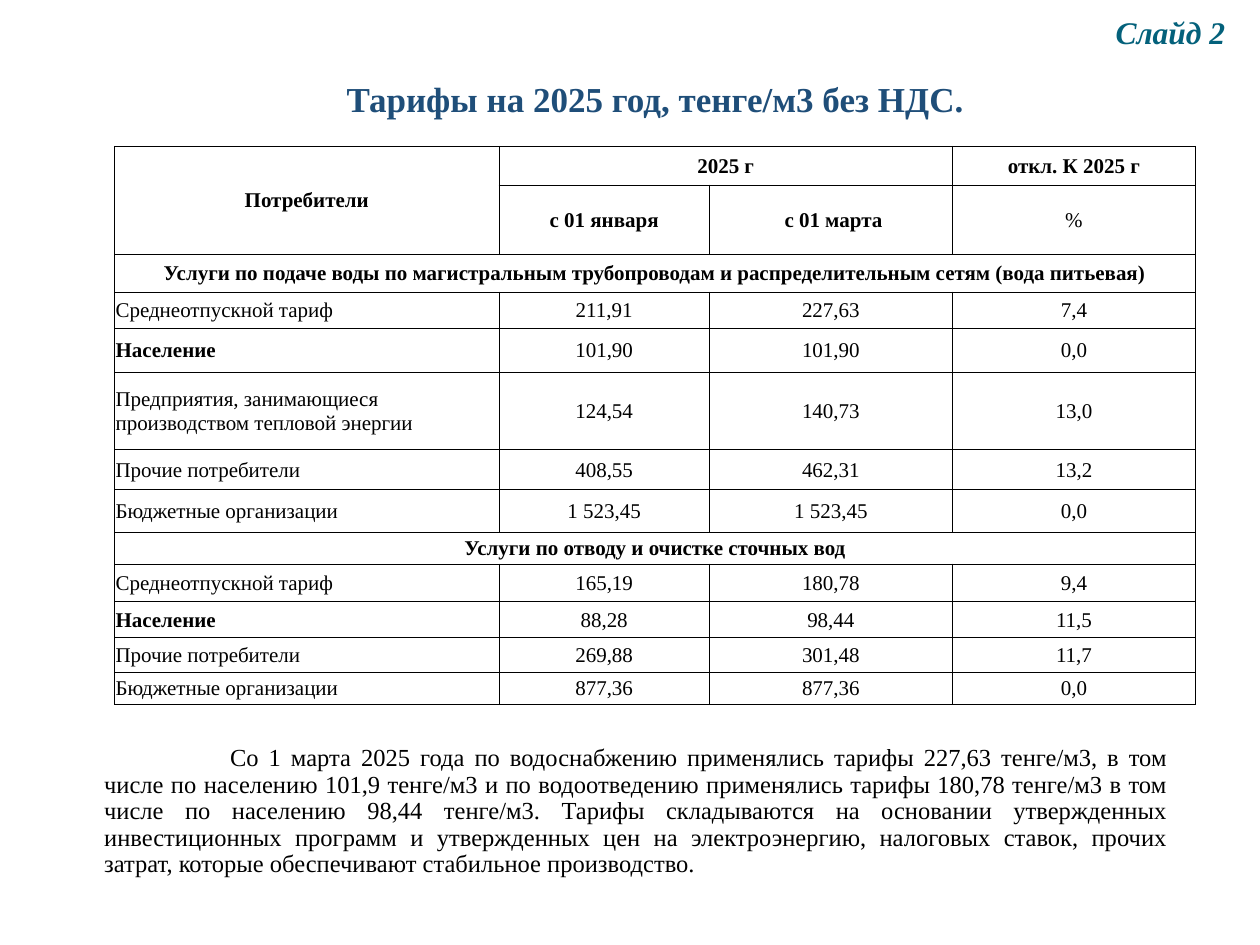
from dataclasses import dataclass

from lxml import etree
from pptx import Presentation
from pptx import util as u
from pptx.dml.color import RGBColor
from pptx.enum import text
from pptx.oxml.ns import qn


@dataclass(frozen=True)
class Theme:
    font: str = "Times New Roman"
    title: str = "1F4E79"
    label: str = "04617B"
    ink: str = "000000"
    paper: str = "FFFFFF"
    title_size: int = 20
    label_size: int = 18
    note_size: int = 14
    table_size: int = 12
    border: float = 0.5


THEME = Theme()
ALIGN = text.PP_ALIGN
COLUMNS = [7.75, 4.24, 4.9, 4.9]
ROW_HEIGHTS = [0.78, 1.4, 0.76, 0.73, 0.89, 1.55, 0.81, 0.86, 0.64, 0.76, 0.73, 0.69, 0.66]
HEADER = [
    ["Потребители", "2025 г", "", "откл. К 2025 г"],
    ["", "с 01 января", " с 01 марта", "%"],
]
SECTIONS = {
    "Услуги по подаче воды по магистральным трубопроводам "
    "и распределительным сетям (вода питьевая)": [
        ["Среднеотпускной тариф", "211,91", "227,63", "7,4"],
        ["Население", "101,90", "101,90", "0,0"],
        ["Предприятия, занимающиеся производством тепловой энергии",
         "124,54", "140,73", "13,0"],
        ["Прочие потребители", "408,55", "462,31", "13,2"],
        ["Бюджетные организации", "1 523,45", "1 523,45", "0,0"],
    ],
    "Услуги по отводу и очистке сточных вод": [
        ["Среднеотпускной тариф", "165,19", "180,78", "9,4"],
        ["Население", "88,28", "98,44", "11,5"],
        ["Прочие потребители", "269,88", "301,48", "11,7"],
        ["Бюджетные организации", "877,36", "877,36", "0,0"],
    ],
}
NOTE = (
    "Со 1 марта 2025 года по водоснабжению применялись тарифы 227,63 тенге/м3, "
    "в том числе по населению 101,9 тенге/м3 и по водоотведению применялись тарифы "
    "180,78 тенге/м3 в том числе по населению 98,44 тенге/м3. Тарифы складываются "
    "на основании утвержденных инвестиционных программ и утвержденных цен на "
    "электроэнергию, налоговых ставок, прочих затрат, которые обеспечивают "
    "стабильное производство."
)


def style_paragraph(p, size, color, align, bold=False, italic=False):
    p.alignment = align
    for r in p.runs:
        r.font.name = THEME.font
        r.font.size = u.Pt(size)
        r.font.bold = bold
        r.font.italic = italic
        r.font.color.rgb = RGBColor.from_string(color)


def add_text(s, content, box, size, color, align, indent=0, **weight):
    sp = s.shapes.add_textbox(*(u.Cm(v) for v in box))
    tf = sp.text_frame
    tf.word_wrap = True
    tf.vertical_anchor = text.MSO_ANCHOR.MIDDLE
    tf.margin_left = tf.margin_right = u.Cm(0.19)
    tf.margin_top = tf.margin_bottom = u.Cm(0.1)
    tf.text = content
    p = tf.paragraphs[0]
    p.line_spacing = 0.9
    style_paragraph(p, size, color, align, **weight)
    if indent:
        p._p.get_or_add_pPr().set("indent", str(u.Cm(indent)))


def add_borders(cell):
    tc_pr = cell._tc.get_or_add_tcPr()
    for side in ("lnL", "lnR", "lnT", "lnB"):
        line = etree.SubElement(tc_pr, qn(f"a:{side}"), w=str(u.Pt(THEME.border)))
        fill = etree.SubElement(line, qn("a:solidFill"))
        etree.SubElement(fill, qn("a:srgbClr"), val=THEME.ink)


def fill_cell(cell, content, align, bold):
    add_borders(cell)
    cell.fill.solid()
    cell.fill.fore_color.rgb = RGBColor.from_string(THEME.paper)
    cell.vertical_anchor = text.MSO_ANCHOR.MIDDLE
    cell.margin_left = cell.margin_right = cell.margin_top = u.Cm(0.02)
    cell.margin_bottom = 0
    cell.text_frame.text = content
    style_paragraph(cell.text_frame.paragraphs[0], THEME.table_size, THEME.ink, align, bold)


def add_tariff_table(s):
    rows = list(HEADER)
    section_rows = []
    for heading, tariffs in SECTIONS.items():
        section_rows.append(len(rows))
        rows += [[heading, "", "", ""], *tariffs]

    frame = s.shapes.add_table(
        len(rows), len(COLUMNS), u.Cm(2.31), u.Cm(2.95),
        u.Cm(sum(COLUMNS)), u.Cm(sum(ROW_HEIGHTS)),
    )
    table = frame.table
    table.first_row = table.horz_banding = False
    for column, width in zip(table.columns, COLUMNS):
        column.width = u.Cm(width)
    for row, height in zip(table.rows, ROW_HEIGHTS):
        row.height = u.Cm(height)

    for i, values in enumerate(rows):
        heading = i < len(HEADER) or i in section_rows
        for j, value in enumerate(values):
            align = ALIGN.CENTER if heading or j else ALIGN.LEFT
            bold = (heading and value != "%") or value == "Население"
            fill_cell(table.cell(i, j), value, align, bold)

    table.cell(0, 0).merge(table.cell(1, 0))
    table.cell(0, 1).merge(table.cell(0, 2))
    for i in section_rows:
        table.cell(i, 0).merge(table.cell(i, len(COLUMNS) - 1))


def main():
    prs = Presentation()
    prs.slide_width, prs.slide_height = u.Cm(25.4), u.Cm(19.05)
    s = prs.slides.add_slide(prs.slide_layouts[6])
    add_text(s, "Тарифы на 2025 год, тенге/м3 без НДС.", (3.71, 1.14, 19, 1.8),
             THEME.title_size, THEME.title, ALIGN.CENTER, bold=True)
    add_text(s, NOTE, (1.91, 15.16, 21.82, 2.41),
             THEME.note_size, THEME.ink, ALIGN.JUSTIFY, indent=2.54)
    add_text(s, "Слайд 2", (22.3, 0.38, 4.39, 0.61),
             THEME.label_size, THEME.label, ALIGN.JUSTIFY, bold=True, italic=True)
    add_tariff_table(s)
    prs.save("out.pptx")


if __name__ == "__main__":
    main()
